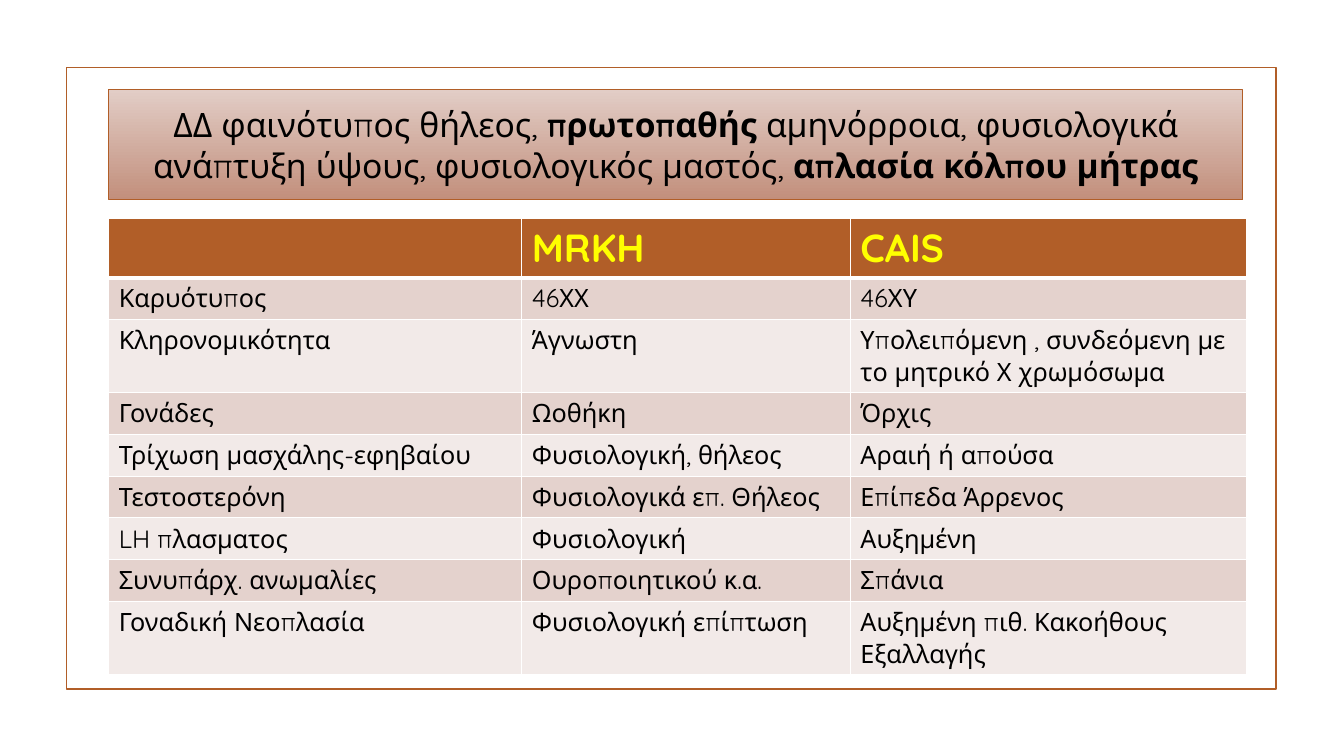
from dataclasses import dataclass

from lxml.etree import SubElement as Sub
from pptx import Presentation
from pptx.dml.color import RGBColor as Rgb
from pptx.enum.shapes import MSO_SHAPE as Kind
from pptx.enum.text import MSO_ANCHOR as Anchor, PP_ALIGN as Align
from pptx.oxml.ns import qn
from pptx.util import Cm, Pt

HUES = {
    "rust": "B15E28",
    "pale": "E2CDC6",
    "clay": "C28F7C",
    "odd": "E4D2CD",
    "even": "F2EAE8",
    "gold": "FFFF00",
    "black": "000000",
    "white": "FFFFFF",
}
FONT = "Quicksand"


@dataclass
class Box:
    left: float
    top: float
    width: float
    height: float
    line: float


@dataclass
class Row:
    label: str
    mrkh: str
    cais: str


FRAME = Box(1.68, 1.7, 30.48, 15.67, 1.25)
TITLE = Box(2.74, 2.26, 28.58, 2.77, 0.75)
WIDTHS = [10.41, 8.28, 9.98]
HIGH = 1.04

PARTS = [
    ("ΔΔ φαινότυπος θήλεος, ", False),
    ("πρωτοπαθής", True),
    (" αμηνόρροια, φυσιολογικά ανάπτυξη ύψους, φυσιολογικός μαστός, ", False),
    ("απλασία κόλπου μήτρας", True),
]

ROWS = [
    Row("", "MRKH", "CAIS"),
    Row("Καρυότυπος", "46ΧΧ", "46ΧΥ"),
    Row("Κληρονομικότητα", "Άγνωστη",
        "Υπολειπόμενη , συνδεόμενη με το μητρικό Χ χρωμόσωμα"),
    Row("Γονάδες", "Ωοθήκη", "Όρχις"),
    Row("Τρίχωση μασχάλης-εφηβαίου", "Φυσιολογική, θήλεος", "Αραιή ή απούσα"),
    Row("Τεστοστερόνη", "Φυσιολογικά επ. Θήλεος", "Επίπεδα Άρρενος"),
    Row("LH πλασματος", "Φυσιολογική", "Αυξημένη"),
    Row("Συνυπάρχ. ανωμαλίες", "Ουροποιητικού κ.α.", "Σπάνια"),
    Row("Γοναδική Νεοπλασία", "Φυσιολογική επίπτωση",
        "Αυξημένη πιθ. Κακοήθους Εξαλλαγής"),
]


def tint(name: str) -> Rgb:
    return Rgb.from_string(HUES[name])


def write(para, text: str, *, size: float = 18, bold: bool = False,
          hue: str = "black") -> None:
    run = para.add_run()
    run.text = text
    font = run.font
    font.name, font.size, font.bold = FONT, Pt(size), bold
    font.color.rgb = tint(hue)


def draw_box(slide, box: Box):
    shape = slide.shapes.add_shape(
        Kind.RECTANGLE, Cm(box.left), Cm(box.top), Cm(box.width), Cm(box.height))
    shape.shadow.inherit = False
    shape.fill.background()
    shape.line.color.rgb = tint("rust")
    shape.line.width = Pt(box.line)
    return shape


def draw_title(slide) -> None:
    shape = draw_box(slide, TITLE)
    shape.fill.gradient()
    shape.fill.gradient_angle = 270
    for stop, (hue, place) in zip(shape.fill.gradient_stops,
                                  [("pale", 0), ("clay", 1)]):
        stop.color.rgb = tint(hue)
        stop.position = place
    frame = shape.text_frame
    frame.word_wrap = True
    frame.vertical_anchor = Anchor.MIDDLE
    para = frame.paragraphs[0]
    para.alignment = Align.CENTER
    for text, bold in PARTS:
        write(para, text, size=24, bold=bold)


def edge(cell, top: float, base: float) -> None:
    props = cell._tc.get_or_add_tcPr()
    for side, width in {"L": 1, "R": 1, "T": top, "B": base}.items():
        line = Sub(props, qn(f"a:ln{side}"), w=str(Pt(width)))
        Sub(Sub(line, qn("a:solidFill")), qn("a:srgbClr"), val=HUES["white"])


def draw_table(slide) -> None:
    table = slide.shapes.add_table(
        len(ROWS), len(WIDTHS), Cm(2.74), Cm(5.51),
        Cm(sum(WIDTHS)), Cm(HIGH * len(ROWS))).table
    for col, width in zip(table.columns, WIDTHS):
        col.width = Cm(width)
    for i, row in enumerate(ROWS):
        table.rows[i].height = Cm(HIGH)
        head = i == 0
        shade = "rust" if head else "odd" if i % 2 else "even"
        for j, text in enumerate([row.label, row.mrkh, row.cais]):
            cell = table.cell(i, j)
            edge(cell, 3 if i == 1 else 1, 3 if head else 1)
            cell.fill.solid()
            cell.fill.fore_color.rgb = tint(shade)
            if text:
                write(cell.text_frame.paragraphs[0], text,
                      size=28 if head else 18, bold=head,
                      hue="gold" if head else "black")


def main() -> None:
    deck = Presentation()
    deck.slide_width, deck.slide_height = Cm(33.87), Cm(19.05)
    slide = deck.slides.add_slide(deck.slide_layouts[6])
    draw_box(slide, FRAME)
    draw_title(slide)
    draw_table(slide)
    deck.save("out.pptx")


if __name__ == "__main__":
    main()
